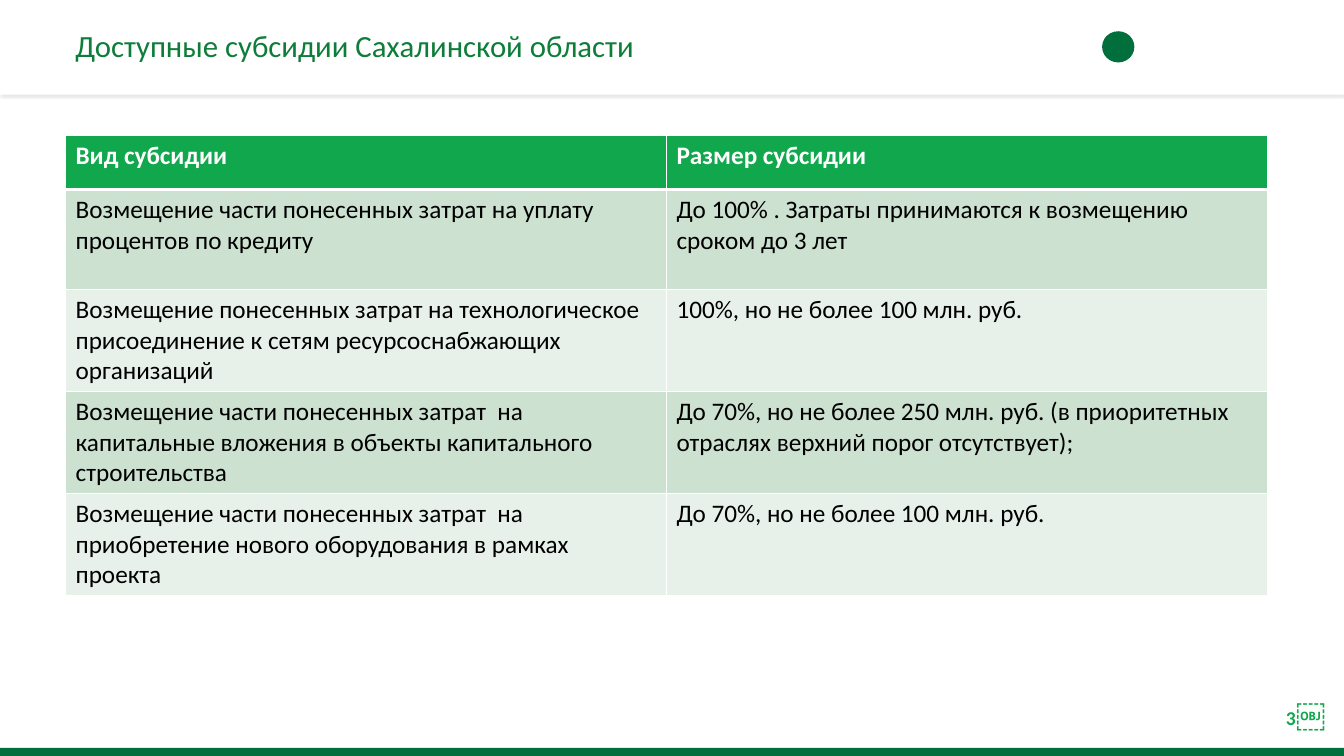
from lxml.etree import SubElement
from pptx import Presentation
from pptx.dml.color import RGBColor as RGB
from pptx.enum.shapes import MSO_SHAPE as SHAPE
from pptx.enum.text import MSO_ANCHOR as ANCHOR, PP_ALIGN as ALIGN
from pptx.oxml.ns import qn
from pptx.util import Inches, Pt

COLORS = {
    "white": "FFFFFF",
    "text": "000000",
    "title": "0D7D39",
    "accent": "11A74C",
    "brand": "006F3C",
    "band_dark": "CCE1D0",
    "band_light": "E7F1E9",
    "shadow": "8A8A8A",
}

SUBSIDIES = [
    ("Вид субсидии", "Размер субсидии"),
    ("Возмещение части понесенных затрат на уплату процентов по кредиту",
     "До 100% . Затраты принимаются к возмещению сроком до 3 лет"),
    ("Возмещение понесенных затрат на технологическое присоединение "
     "к сетям ресурсоснабжающих организаций",
     "100%, но не более 100 млн. руб."),
    ("Возмещение части понесенных затрат  на капитальные вложения "
     "в объекты капитального строительства",
     "До 70%, но не более 250 млн. руб. (в приоритетных отраслях "
     "верхний порог отсутствует);"),
    ("Возмещение части понесенных затрат  на приобретение нового "
     "оборудования в рамках проекта",
     "До 70%, но не более 100 млн. руб."),
]

# Shares of the slide, in percent
LEFT, WIDTH = 4.88, 89.42
RIGHT = LEFT + WIDTH
HEADER_HEIGHT = 12.53
FOOTER_TOP = 98.93


class SubsidySlide:
    """Holds the style and the current slide; places are percent shares."""

    font = "Calibri"

    def __init__(self, deck):
        self.deck = deck
        self.slide = deck.slides.add_slide(deck.slide_layouts[6])

    def place(self, left, top, width, height):
        across, down = self.deck.slide_width / 100, self.deck.slide_height / 100
        return [round(v) for v in
                (left * across, top * down, width * across, height * down)]

    def run(self, paragraph, text, size, color, bold=False):
        run = paragraph.add_run()
        run.text = text
        run.font.name = self.font
        run.font.size = Pt(size)
        run.font.bold = bold
        run.font.color.rgb = RGB.from_string(COLORS[color])

    def block(self, place, color, kind=SHAPE.RECTANGLE):
        block = self.slide.shapes.add_shape(kind, *self.place(*place))
        block.shadow.inherit = False
        block.fill.solid()
        block.fill.fore_color.rgb = RGB.from_string(COLORS[color])
        block.line.fill.background()
        return block

    def drop_shadow(self, block, blur, distance, alpha):
        effects = block._element.spPr.find(qn("a:effectLst"))
        shadow = SubElement(effects, qn("a:outerShdw"), blurRad=str(Pt(blur)),
                            dist=str(Pt(distance)), dir=str(90 * 60000),
                            algn="t", rotWithShape="0")
        tint = SubElement(shadow, qn("a:srgbClr"), val=COLORS["shadow"])
        SubElement(tint, qn("a:alpha"), val=str(alpha * 1000))

    def text(self, place, runs, align=ALIGN.LEFT, insets=(0.1, 0.05), spacing=1):
        frame = self.slide.shapes.add_textbox(*self.place(*place)).text_frame
        frame.word_wrap = True
        frame.vertical_anchor = ANCHOR.MIDDLE
        frame.margin_left = frame.margin_right = Inches(insets[0])
        frame.margin_top = frame.margin_bottom = Inches(insets[1])
        paragraph = frame.paragraphs[0]
        paragraph.alignment = align
        paragraph.line_spacing = spacing
        for run in runs:
            self.run(paragraph, *run)

    def borders(self, cell, widths):
        properties = cell._tc.get_or_add_tcPr()
        for index, (side, width) in enumerate(widths.items()):
            line = SubElement(properties, qn(f"a:ln{side}"), w=str(Pt(width)))
            fill = SubElement(line, qn("a:solidFill"))
            SubElement(fill, qn("a:srgbClr"), val=COLORS["white"])
            properties.insert(index, line)

    def table(self, place, rows, heights, size):
        table = self.slide.shapes.add_table(
            len(rows), len(rows[0]), *self.place(*place)).table
        for r, (values, height) in enumerate(zip(rows, heights)):
            heading = r == 0
            band = "accent" if heading else ("band_light", "band_dark")[r % 2]
            table.rows[r].height = self.place(0, 0, 0, height)[3]
            for c, value in enumerate(values):
                cell = table.cell(r, c)
                cell.fill.solid()
                cell.fill.fore_color.rgb = RGB.from_string(COLORS[band])
                self.borders(cell, {"L": 1, "R": 1, "T": 3 if r == 1 else 1,
                                    "B": 3 if heading else 1})
                self.run(cell.text_frame.paragraphs[0], value, size,
                         "white" if heading else "text", heading)


def main():
    deck = Presentation()
    deck.slide_width, deck.slide_height = Inches(13.33), Inches(7.5)
    page = SubsidySlide(deck)

    # Footer band and page number
    page.block((0, FOOTER_TOP, 100, 100 - FOOTER_TOP), "brand")
    page.text((RIGHT, 92.13, 100 - RIGHT, 4.67),
              [("3", 14, "accent", True), ("￼", 21, "accent", True)],
              align=ALIGN.CENTER, insets=(0, 0))

    # Header with a plain mark at the right margin
    header = page.block((0, 0, 100, HEADER_HEIGHT), "white")
    page.drop_shadow(header, blur=1, distance=2, alpha=20)
    page.block((82, 4.13, 2.4, 4.13), "brand", SHAPE.OVAL)
    page.text((LEFT, 0, WIDTH, HEADER_HEIGHT),
              [("Доступные субсидии Сахалинской области", 22, "title")],
              spacing=0.9)

    # Subsidies and their sizes
    heights = [7.2, 13.2] + [13.5] * 3
    page.table((LEFT, 17.87, WIDTH, sum(heights)), SUBSIDIES, heights, 18)

    deck.save("out.pptx")


if __name__ == "__main__":
    main()
